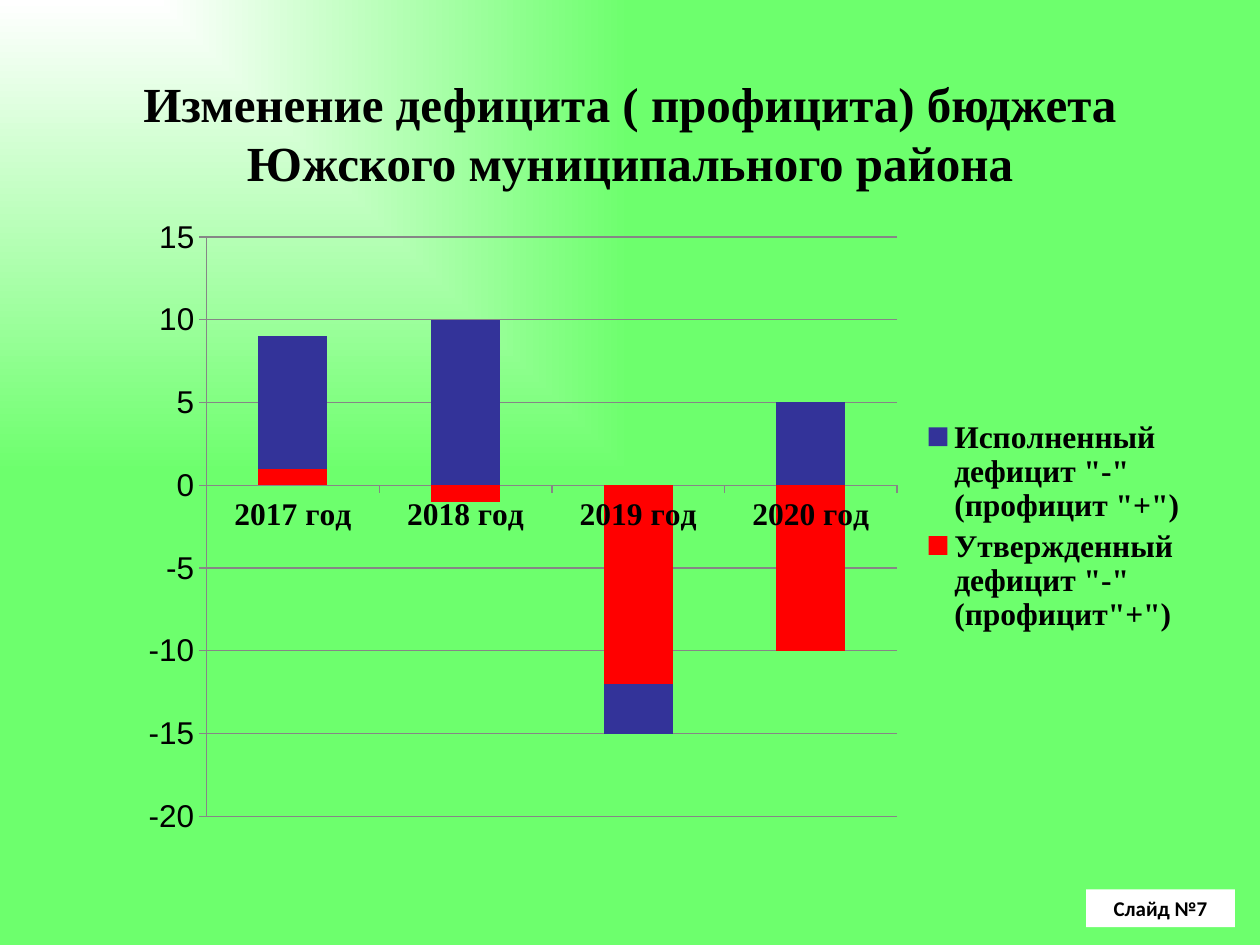
from typing import NamedTuple

from lxml import etree
from pptx import Presentation
from pptx import util as u
from pptx.chart.data import CategoryChartData
from pptx.dml.color import RGBColor
from pptx.enum import chart as ch, shapes, text
from pptx.oxml import ns


class Series(NamedTuple):
    name: str
    values: tuple[int, ...]
    color: str


class Box(NamedTuple):
    x: float
    y: float
    w: float
    h: float


YEARS = [f"{year} год" for year in range(2017, 2021)]
SERIES = [
    Series('Утвержденный дефицит "-" (профицит"+")', (1, -1, -12, -10), "FF0000"),
    Series('Исполненный дефицит "-" (профицит "+")', (8, 10, -3, 5), "333399"),
]
SERIF = "Times New Roman"
CHART = Box(1.02, 1.64, 8.52, 5.08)
PLOT = Box(0.62, 0.24, 5.48, 4.6)
LEGEND = Box(6.28, 1.65, 2.13, 1.78)


def rgb(value: str) -> RGBColor:
    return RGBColor.from_string(value)


def style_font(font, name: str, size: float, bold: bool) -> None:
    font.name, font.size, font.bold = name, u.Pt(size), bold
    font.color.rgb = rgb("000000")


def style_line(line) -> None:
    line.color.rgb = rgb("868686")
    line.width = u.Pt(0.75)


def set_background(s) -> None:
    fill = s.background.fill
    fill.gradient()
    for stop, color, position in zip(fill.gradient_stops, ("FFFFFF", "6DFF6D"), (0, 1)):
        stop.color.rgb = rgb(color)
        stop.position = position
    lin = s.background._cSld.find(".//" + ns.qn("a:lin"))
    radial = etree.Element(ns.qn("a:path"), {"path": "rect"})
    etree.SubElement(radial, ns.qn("a:fillToRect"), {"r": "100000", "b": "100000"})
    lin.getparent().replace(lin, radial)


def set_layout(element, box: Box, inner: bool = False) -> None:
    for old in element.findall(ns.qn("c:layout")):
        element.remove(old)
    layout = etree.Element(ns.qn("c:layout"))
    manual = etree.SubElement(layout, ns.qn("c:manualLayout"))
    settings = {"layoutTarget": "inner"} if inner else {}
    settings |= {"xMode": "edge", "yMode": "edge"}
    fractions = (box.x / CHART.w, box.y / CHART.h, box.w / CHART.w, box.h / CHART.h)
    settings |= {key: str(value) for key, value in zip(Box._fields, fractions)}
    for tag, value in settings.items():
        etree.SubElement(manual, ns.qn("c:" + tag), {"val": value})
    element.insert(0 if inner else 1, layout)


def add_title(s) -> None:
    sp = s.shapes.title
    sp.left, sp.top, sp.width, sp.height = map(u.Inches, (0.5, 1.02, 9, 0.53))
    tf = sp.text_frame
    tf.text = "Изменение дефицита ( профицита) бюджета Южского муниципального района\v"
    tf.word_wrap = True
    tf.auto_size = text.MSO_AUTO_SIZE.NONE
    tf.vertical_anchor = text.MSO_ANCHOR.MIDDLE
    p = tf.paragraphs[0]
    p.alignment = text.PP_ALIGN.CENTER
    style_font(p.font, SERIF, 28, True)
    for r in p.runs:
        style_font(r.font, SERIF, 28, True)
    for line_break in p._p.findall(ns.qn("a:br")):
        etree.SubElement(line_break, ns.qn("a:rPr"), {"sz": "2800", "b": "1"})


def add_slide_label(s) -> None:
    sp = s.shapes.add_shape(shapes.MSO_SHAPE.RECTANGLE,
                            *map(u.Inches, (8.62, 7.06, 1.18, 0.3)))
    sp.shadow.inherit = False
    sp.fill.solid()
    sp.fill.fore_color.rgb = rgb("FFFFFF")
    sp.line.fill.background()
    tf = sp.text_frame
    tf.text = "Слайд №7"
    p = tf.paragraphs[0]
    p.alignment = text.PP_ALIGN.CENTER
    style_font(p.runs[0].font, "Calibri", 12, True)


def add_budget_chart(s) -> None:
    data = CategoryChartData()
    data.categories = YEARS
    for item in SERIES:
        data.add_series(item.name, item.values)
    chart = s.shapes.add_chart(ch.XL_CHART_TYPE.COLUMN_STACKED,
                               *map(u.Inches, CHART), data).chart
    chart.has_title = False
    style_font(chart.font, "Arial", 18, False)

    plot = chart.plots[0]
    plot.gap_width, plot.overlap, plot.vary_by_categories = 150, 100, False
    for series, item in zip(plot.series, SERIES):
        series.invert_if_negative = False
        series.format.fill.solid()
        series.format.fill.fore_color.rgb = rgb(item.color)

    years, amounts = chart.category_axis, chart.value_axis
    amounts.minimum_scale, amounts.maximum_scale, amounts.major_unit = -20, 15, 5
    amounts.has_major_gridlines = True
    for axis in (years, amounts):
        axis.major_tick_mark = ch.XL_TICK_MARK.OUTSIDE
    for part in (years, amounts, amounts.major_gridlines):
        style_line(part.format.line)
    style_font(years.tick_labels.font, SERIF, 18, True)
    style_font(amounts.tick_labels.font, "Arial", 18, False)

    chart.has_legend = True
    legend = chart.legend
    legend.position = ch.XL_LEGEND_POSITION.RIGHT
    legend.include_in_layout = False
    style_font(legend.font, SERIF, 18, True)
    set_layout(legend._element, LEGEND)
    set_layout(chart._chartSpace.chart.plotArea, PLOT, True)


def main() -> None:
    prs = Presentation()
    prs.slide_width, prs.slide_height = u.Inches(10), u.Inches(7.5)
    s = prs.slides.add_slide(prs.slide_layouts[5])
    set_background(s)
    add_slide_label(s)
    add_title(s)
    add_budget_chart(s)
    prs.save("out.pptx")


if __name__ == "__main__":
    main()
